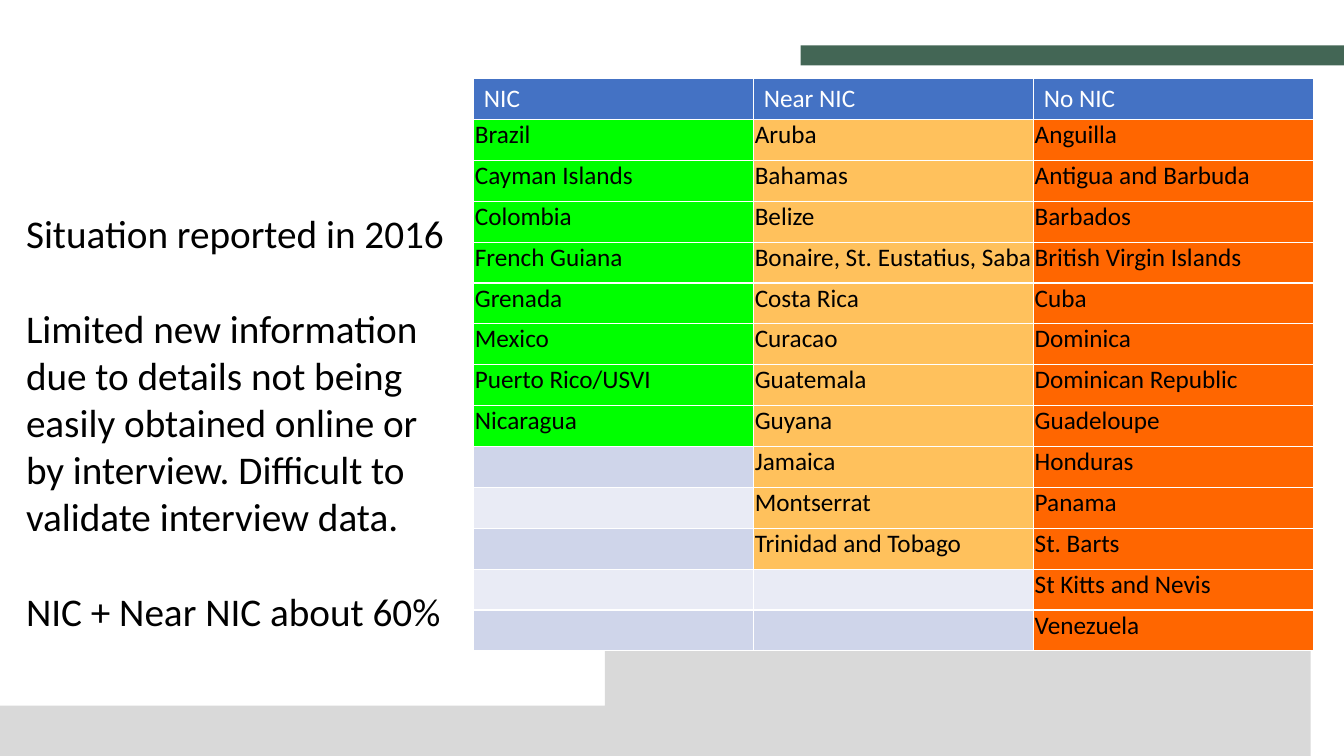
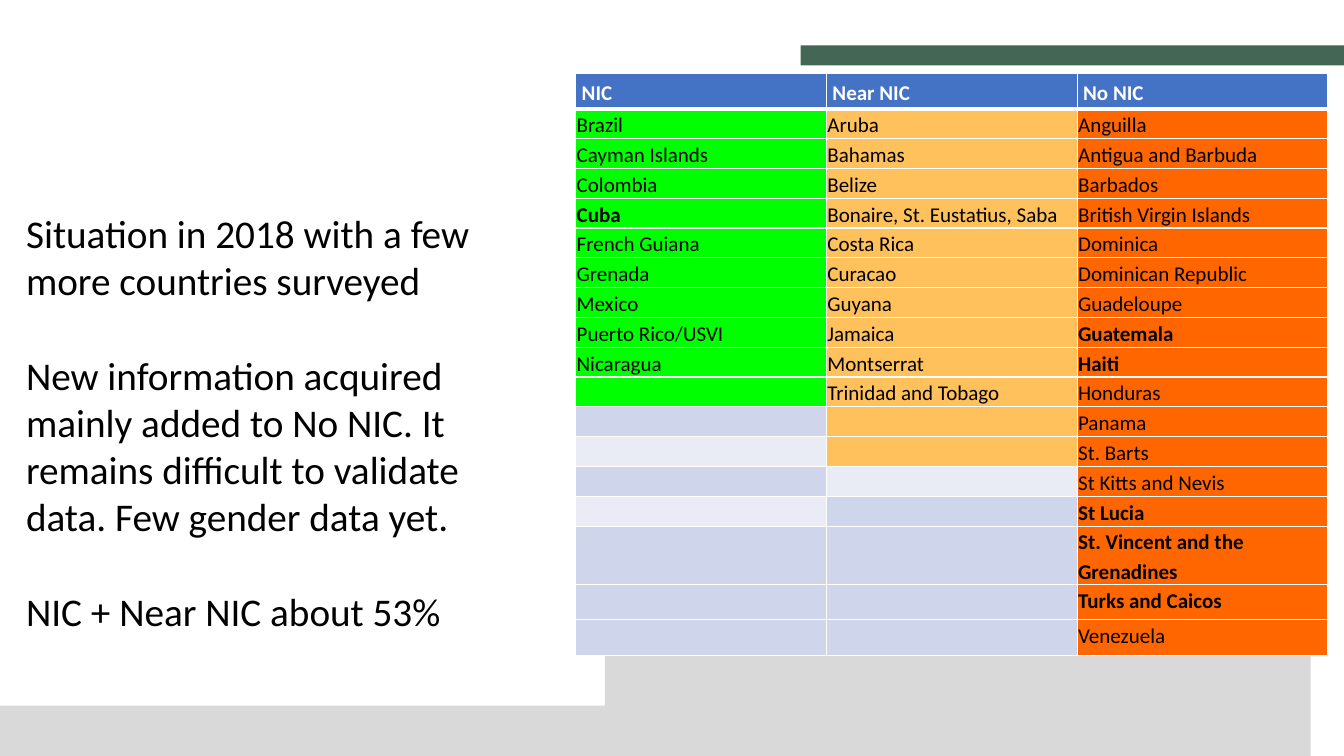
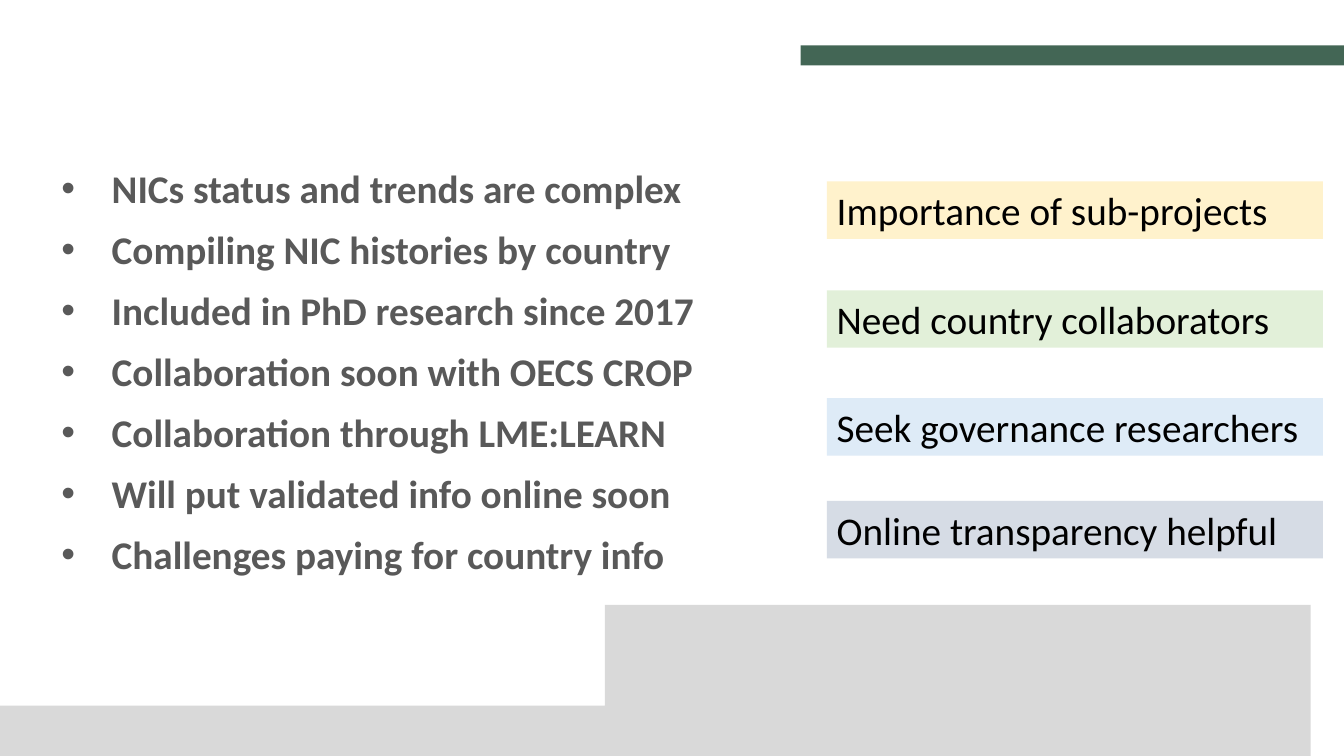
from dataclasses import dataclass

from lxml.etree import SubElement
from pptx import Presentation
from pptx.dml.color import RGBColor
from pptx.enum.shapes import MSO_SHAPE
from pptx.enum.text import MSO_ANCHOR, PP_ALIGN
from pptx.oxml.ns import qn
from pptx.util import Inches, Pt

WIDTH, HEIGHT = 13.33, 7.5
FONT = "Calibri"
BODY_SIZE = 28

WHITE = RGBColor(0xFF, 0xFF, 0xFF)
BLACK = RGBColor(0x00, 0x00, 0x00)
GREY_TEXT = RGBColor(0x59, 0x59, 0x59)
WAVE_GREY = RGBColor(0xD9, 0xD9, 0xD9)
BAND_GREEN = RGBColor(0x43, 0x66, 0x55)
HEADER_BLUE = RGBColor(0x44, 0x72, 0xC4)
NIC_GREEN = RGBColor(0x00, 0xFF, 0x00)
NEAR_AMBER = RGBColor(0xFF, 0xC1, 0x5C)
NONE_ORANGE = RGBColor(0xFF, 0x66, 0x00)
DARK_BLANK = RGBColor(0xCF, 0xD5, 0xEA)
LIGHT_BLANK = RGBColor(0xE9, 0xEB, 0xF5)
CREAM = RGBColor(0xFF, 0xF2, 0xCC)
PALE_GREEN = RGBColor(0xE2, 0xF0, 0xD9)
PALE_BLUE = RGBColor(0xDE, 0xEB, 0xF7)
SLATE = RGBColor(0xD6, 0xDC, 0xE5)

BLANKS = {"D": DARK_BLANK, "L": LIGHT_BLANK}
WAVE_START = (WIDTH, 6.46)
WAVE_CURVES = [
    ((11.65, 6.22), (9.02, 6.16), (5.02, 6.63)),
    ((1.33, 7.07), (0.26, 6.68), (0, 6.52)),
]
CURVE_STEPS = 40


@dataclass
class Column:
    """Names fill the column from the top; blanks (D dark, L light) follow."""
    title: str
    color: RGBColor
    names: list
    blanks: str = ""


@dataclass
class TableStyle:
    size: int
    header_bold: bool
    header_margins: tuple
    header_rule: float
    line_spacing: float


COUNTRIES_2016 = [
    Column("NIC", NIC_GREEN, [
        "Brazil", "Cayman Islands", "Colombia", "French Guiana", "Grenada",
        "Mexico", "Puerto Rico/USVI", "Nicaragua"], "DLDLD"),
    Column("Near NIC", NEAR_AMBER, [
        "Aruba", "Bahamas", "Belize", "Bonaire, St. Eustatius, Saba",
        "Costa Rica", "Curacao", "Guatemala", "Guyana", "Jamaica",
        "Montserrat", "Trinidad and Tobago"], "LD"),
    Column("No NIC", NONE_ORANGE, [
        "Anguilla", "Antigua and Barbuda", "Barbados",
        "British Virgin Islands", "Cuba", "Dominica", "Dominican Republic",
        "Guadeloupe", "Honduras", "Panama", "St. Barts",
        "St Kitts and Nevis", "Venezuela"]),
]
COUNTRIES_2018 = [
    Column("NIC", NIC_GREEN, [
        "Brazil", "Cayman Islands", "Colombia", "Cuba", "French Guiana",
        "Grenada", "Mexico", "Puerto Rico/USVI", "Nicaragua", ""], "DLDLDDD"),
    Column("Near NIC", NEAR_AMBER, [
        "Aruba", "Bahamas", "Belize", "Bonaire, St. Eustatius, Saba",
        "Costa Rica", "Curacao", "Guyana", "Jamaica", "Montserrat",
        "Trinidad and Tobago", "", ""], "LDDDD"),
    Column("No NIC", NONE_ORANGE, [
        "Anguilla", "Antigua and Barbuda", "Barbados",
        "British Virgin Islands", "Dominica", "Dominican Republic",
        "Guadeloupe", "Guatemala", "Haiti", "Honduras", "Panama",
        "St. Barts", "St Kitts and Nevis", "St Lucia",
        "St. Vincent and the Grenadines", "Turks and Caicos", "Venezuela"]),
]
CHANGED_IN_2018 = {
    "Cuba", "Guatemala", "Haiti", "St Lucia",
    "St. Vincent and the Grenadines", "Turks and Caicos",
}
STYLE_2016 = TableStyle(18, False, (0.1, 0.05), 1, 1.0)
STYLE_2018 = TableStyle(15, True, (0.06, 0.03), 3, 1.15)
ROWS_2016 = [5.68 / 14] * 14
ROWS_2018 = [0.35] + [4.14 / 14] * 14 + [0.58, 0.35, 0.35]

SUMMARY_2016 = [
    "Situation reported in 2016",
    "Limited new information due to details not being easily obtained online"
    " or by interview. Difficult to validate interview data.",
    "NIC + Near NIC about 60%",
]
SUMMARY_2018 = [
    "Situation in 2018 with a few more countries surveyed",
    "New information acquired mainly added to No NIC. It remains difficult"
    " to validate data. Few gender data yet.",
    "NIC + Near NIC about 53%",
]
NEXT_STEPS = [
    "NICs status and trends are complex",
    "Compiling NIC histories by country",
    "Included in PhD research since 2017",
    "Collaboration soon with OECS CROP",
    "Collaboration through LME:LEARN",
    "Will put validated info online soon",
    "Challenges paying for country info",
]
NEEDS = [
    (1.8, CREAM, "Importance of sub-projects"),
    (2.88, PALE_GREEN, "Need country collaborators"),
    (3.95, PALE_BLUE, "Seek governance researchers"),
    (4.97, SLATE, "Online transparency helpful"),
]


def paint(shape, color):
    shape.shadow.inherit = False
    shape.fill.solid()
    shape.fill.fore_color.rgb = color
    shape.line.fill.background()


def add_span(para, text, size=BODY_SIZE, color=BLACK, bold=False):
    span = para.add_run()
    span.text = text
    span.font.name = FONT
    span.font.size = Pt(size)
    span.font.bold = bold
    span.font.color.rgb = color


def add_block(page, left, top, width, height, color):
    block = page.shapes.add_shape(
        MSO_SHAPE.RECTANGLE, *map(Inches, (left, top, width, height)))
    paint(block, color)
    return block


def curve_points(start, first, second, end):
    """Sample a cubic curve as evenly stepped points after its start."""
    for step in range(1, CURVE_STEPS + 1):
        t = step / CURVE_STEPS
        u = 1 - t
        yield tuple(
            u**3 * a + 3 * u * u * t * b + 3 * u * t * t * c + t**3 * d
            for a, b, c, d in zip(start, first, second, end))


def add_wave(page):
    outline = [WAVE_START]
    for curve in WAVE_CURVES:
        outline.extend(curve_points(outline[-1], *curve))
    outline.append((0, HEIGHT))
    builder = page.shapes.build_freeform(WIDTH, HEIGHT, scale=Inches(1))
    builder.add_line_segments(outline, close=True)
    paint(builder.convert_to_shape(), WAVE_GREY)


def add_page(deck):
    page = deck.slides.add_slide(deck.slide_layouts[6])
    add_wave(page)
    add_block(page, 7.94, 0.45, WIDTH - 7.94, 0.2, BAND_GREEN)
    return page


def add_text(page, left, top, width, height):
    box = page.shapes.add_textbox(*map(Inches, (left, top, width, height)))
    box.text_frame.word_wrap = True
    return box.text_frame


def fill_paragraphs(frame, texts):
    """Yield each new paragraph with its index and text."""
    for index, text in enumerate(texts):
        para = frame.add_paragraph() if index else frame.paragraphs[0]
        yield index, para, text


def add_summary(page, width, texts):
    frame = add_text(page, 0.16, 2.03, width, 4.34)
    for index, para, text in fill_paragraphs(frame, texts):
        if index:
            para.space_before = Pt(34)
        add_span(para, text)


def add_bullets(page, texts):
    frame = add_text(page, 0.51, 1.58, 7.42, 4.42)
    for _, para, text in fill_paragraphs(frame, texts):
        para.space_after = Pt(10)
        properties = para._p.get_or_add_pPr()
        properties.set("marL", str(Inches(0.5)))
        properties.set("indent", str(-Inches(0.5)))
        SubElement(properties, qn("a:buFont"), typeface="Arial")
        SubElement(properties, qn("a:buChar"), char="•")
        add_span(para, text, color=GREY_TEXT, bold=True)


def add_need(page, top, color, text):
    block = add_block(page, 8.2, top, 4.92, 0.57, color)
    frame = block.text_frame
    frame.word_wrap = True
    frame.vertical_anchor = MSO_ANCHOR.TOP
    para = frame.paragraphs[0]
    para.alignment = PP_ALIGN.LEFT
    add_span(para, text)


def add_borders(cell, top, bottom):
    properties = cell._tc.get_or_add_tcPr()
    for side, points in (("L", 1), ("R", 1), ("T", top), ("B", bottom)):
        line = SubElement(properties, qn(f"a:ln{side}"), w=str(Pt(points)))
        fill = SubElement(line, qn("a:solidFill"))
        SubElement(fill, qn("a:srgbClr"), val=str(WHITE))


def fill_cell(cell, text, fill, color, bold, margins, style):
    cell.fill.solid()
    cell.fill.fore_color.rgb = fill
    side, edge = map(Inches, margins)
    cell.margin_left = cell.margin_right = side
    cell.margin_top = cell.margin_bottom = edge
    para = cell.text_frame.paragraphs[0]
    para.line_spacing = style.line_spacing
    if text:
        add_span(para, text, style.size, color, bold)
    else:
        para._p.get_or_add_endParaRPr().set("sz", str(style.size * 100))


def add_countries(page, left, top, width, heights, columns, style, changed=()):
    frame = page.shapes.add_table(
        len(heights), len(columns),
        *map(Inches, (left, top, width, sum(heights))))
    table = frame.table
    for row, height in zip(table.rows, heights):
        row.height = Inches(height)
    for number, column in enumerate(columns):
        table.columns[number].width = Inches(width / len(columns))
        entries = [(name, column.color) for name in column.names]
        entries += [("", BLANKS[blank]) for blank in column.blanks]
        header = table.cell(0, number)
        add_borders(header, 1, style.header_rule)
        fill_cell(header, column.title, HEADER_BLUE, WHITE,
                  style.header_bold, style.header_margins, style)
        for row, (name, fill) in enumerate(entries, 1):
            cell = table.cell(row, number)
            add_borders(cell, style.header_rule if row == 1 else 1, 1)
            fill_cell(cell, name, fill, BLACK, name in changed,
                      (0.01, 0), style)


def main():
    deck = Presentation()
    deck.slide_width = Inches(WIDTH)
    deck.slide_height = Inches(HEIGHT)

    page = add_page(deck)
    add_countries(page, 4.7, 0.78, 8.33, ROWS_2016, COUNTRIES_2016, STYLE_2016)
    add_summary(page, 4.53, SUMMARY_2016)

    page = add_page(deck)
    add_summary(page, 4.91, SUMMARY_2018)
    add_countries(page, 5.71, 0.73, 7.46, ROWS_2018, COUNTRIES_2018,
                  STYLE_2018, CHANGED_IN_2018)

    page = add_page(deck)
    add_bullets(page, NEXT_STEPS)
    for top, color, text in NEEDS:
        add_need(page, top, color, text)

    deck.save("out.pptx")


if __name__ == "__main__":
    main()
